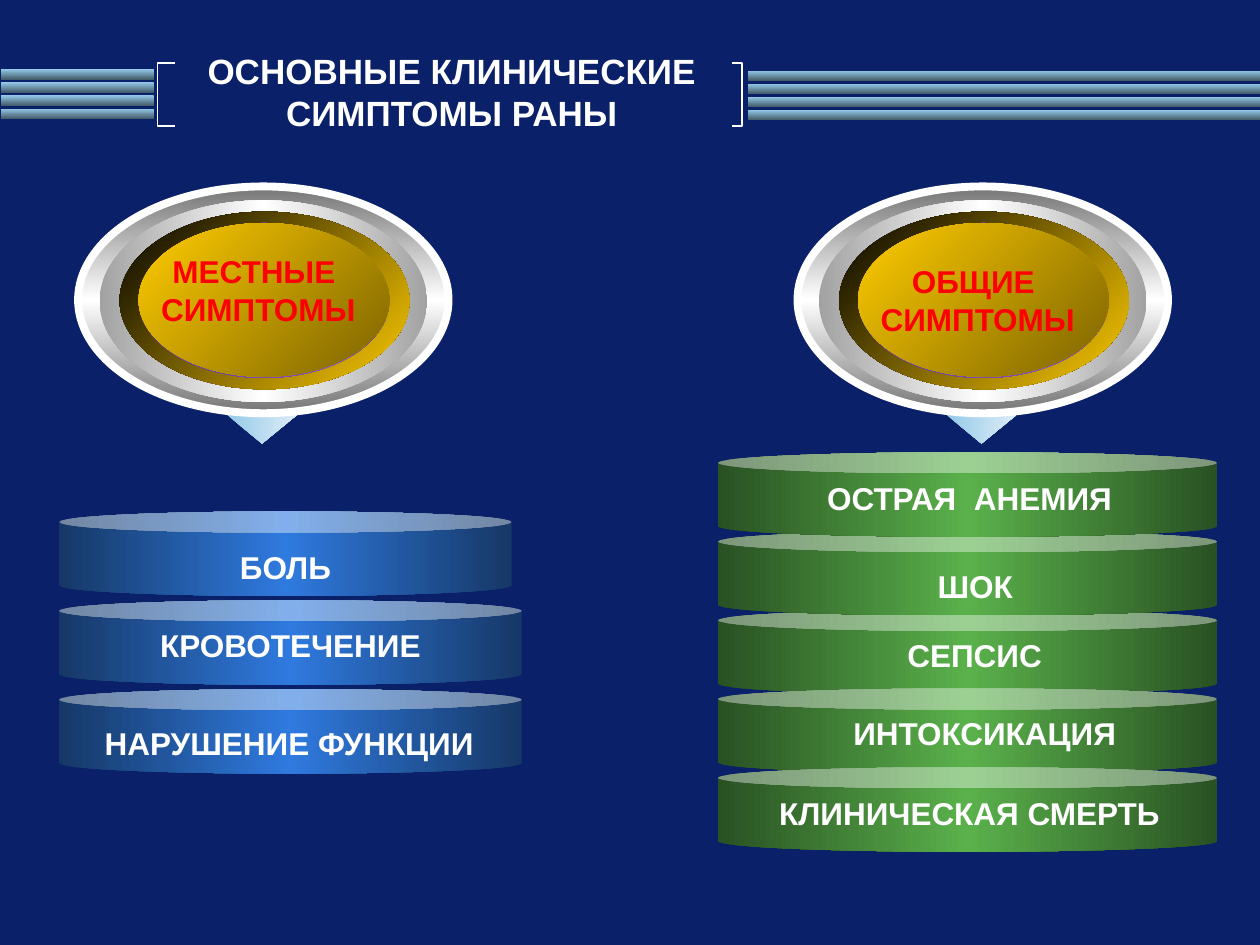
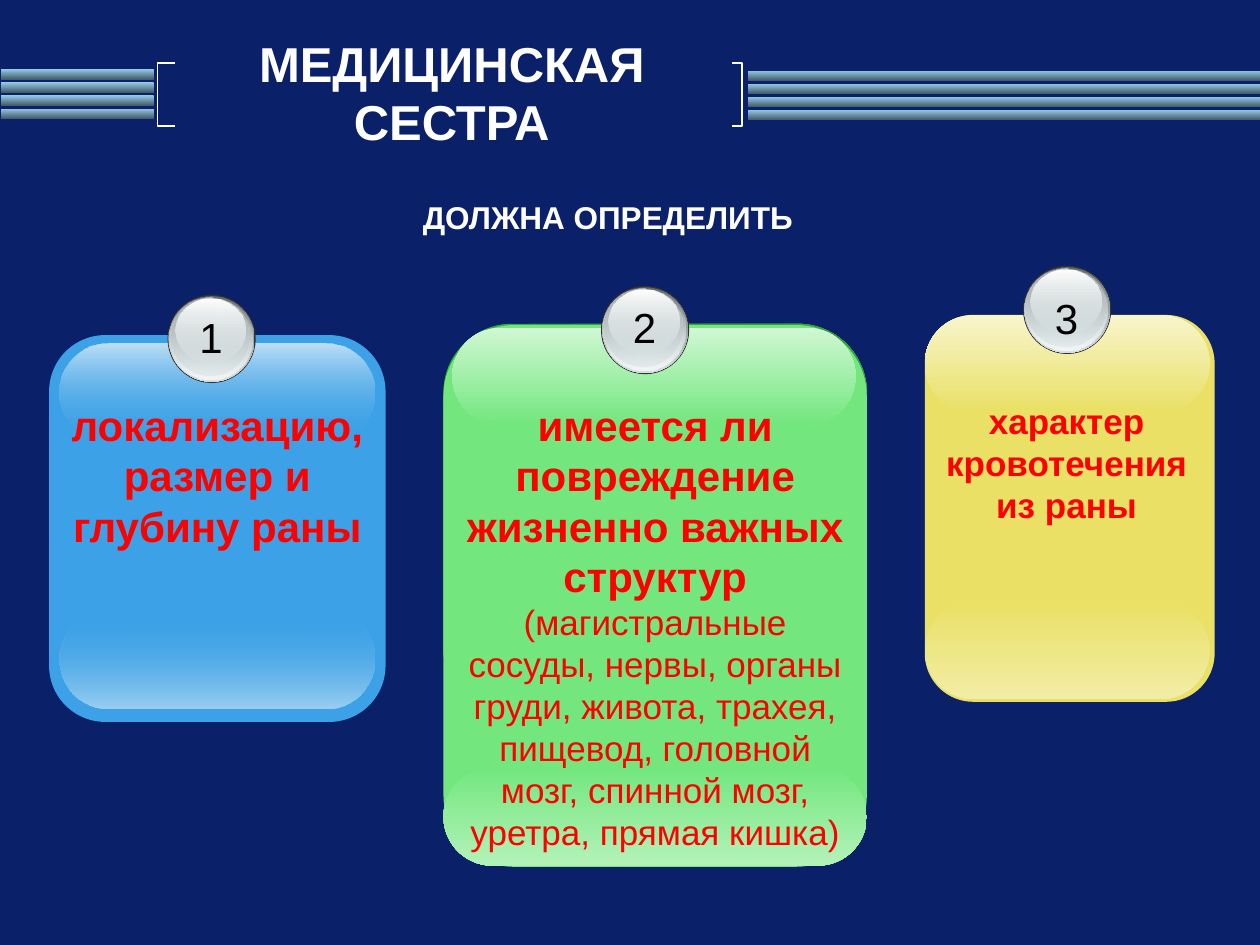
from lxml import etree
from pptx import Presentation
from pptx.dml.color import RGBColor
from pptx.enum import shapes as kinds, text as styles
from pptx.oxml.ns import qn
from pptx.util import Inches, Pt

FONT, NAVY, WHITE, RED, BLACK = "Arial", "0A2068", "FFFFFF", "FF0000", "000000"
SHAPE = kinds.MSO_SHAPE
BAR_FILL = [(0, "94CAE8"), (100, "445D6B")]
BAR_HEIGHT, BAR_STEP = 0.08, 0.104
BAR_STACKS = [(0.01, 0.55, 1.21), (5.94, 0.56, 4.06)]
BRACKETS = [(1.39, 1.25), (5.81, 5.89)]
BRACKET_TOP, BRACKET_BOTTOM = 0.5, 1
TITLE_BOX = (1.42, 0.42, 4.33, 0.62)

MEDALLION_TOP = 1.48
MEDALLION_LAYERS = [
    ((0, 0, 2.94, 1.8), [(0, "767676"), (50, WHITE), (100, "767676")], 90),
    ((0.17, 0.11, 2.6, 1.6), [(0, "A2A2A2"), (50, WHITE), (100, "A2A2A2")], 0),
    ((0.33, 0.2, 2.29, 1.41), [(0, WHITE), (50, "8A52C8"), (100, WHITE)], 45),
    ((0.33, 0.2, 2.3, 1.41), [(0, BLACK), (100, "FFCC00")], 45),
    ((0.48, 0.29, 1.99, 1.23), [(0, "6A3F99"), (50, "8A52C8"), (100, "6A3F99")], 315),
    ((0.48, 0.29, 1.99, 1.22), [(0, "FFCC00"), (100, "7C6300")], 45),
]
POINTER_FILL = [(0, "94CAE8"), (100, "DDECF6")]
BLUE_DRUM = [(0, "163867"), (50, "2F7ADF"), (100, "163867")]
GREEN_DRUM = [(0, "295123"), (50, "5AB14B"), (100, "295123")]
SYMPTOM_GROUPS = [
    {
        "heading": ["МЕСТНЫЕ ", "СИМПТОМЫ"], "heading_top": 1.95, "medallion_left": 0.62,
        "left": 0.47, "top": 4.06, "step": 0.705, "fill": BLUE_DRUM, "widths": [3.59, 3.67, 3.67],
        "order": [2, 1, 0],
        "labels": [("БОЛЬ", 0.47, 4.3, 3.59), ("КРОВОТЕЧЕНИЕ", 0.47, 4.92, 3.67),
                   ("НАРУШЕНИЕ ФУНКЦИИ", 0.47, 5.7, 3.65)],
    },
    {
        "heading": ["ОБЩИЕ ", "СИМПТОМЫ"], "heading_top": 2.03, "medallion_left": 6.33,
        "left": 5.7, "top": 3.59, "step": 0.625, "fill": GREEN_DRUM, "widths": [3.96] * 5,
        "order": [2, 1, 0, 3, 4],
        "labels": [("ОСТРАЯ  АНЕМИЯ", 5.78, 3.75, 3.83), ("ШОК", 6.02, 4.45, 3.44),
                   ("СЕПСИС", 6.33, 5, 2.81), ("ИНТОКСИКАЦИЯ", 6.41, 5.62, 2.81),
                   ("КЛИНИЧЕСКАЯ СМЕРТЬ", 5.86, 6.25, 3.67)],
    },
]

BADGE_LAYERS = [
    ((0, 0, 0.7, 0.7), "333333"),
    ((0.01, 0.01, 0.68, 0.68), [(0, "636869"), (100, "D6E1E2")]),
    ((0.01, 0.01, 0.66, 0.66), [(0, "D6E1E2", 0), (100, "F1F5F5")]),
    ((0.02, 0.02, 0.63, 0.62), [(0, "AAB2B3"), (100, "D6E1E2", 48)]),
    ((0.06, 0.03, 0.56, 0.5), [(0, WHITE), (100, "D6E1E2", 38)]),
]
CARDS = [
    {
        "number": "1", "badge": (1.33, 2.34), "number_top": 2.42,
        "bodies": [((0.39, 2.66, 2.67, 3.07), 0.167, "3CA1E6")],
        "glosses": [((0.47, 4.84, 2.5, 0.78), [(0, "3CA1E6", 0), (100, "9BCFF2")]),
                    ((0.47, 2.73, 2.5, 0.77), [(0, "BEE0F7"), (100, "3CA1E6", 0)])],
        "text_box": (0.39, 3.12, 2.67, 1.31),
        "paragraphs": [("локализацию, размер и глубину раны", 24, True)],
    },
    {
        "number": "3", "badge": (8.12, 2.11), "number_top": 2.27,
        "bodies": [((7.34, 2.5, 2.3, 3.07), 0.167, "E9E065")],
        "glosses": [((7.34, 4.77, 2.26, 0.78), [(0, "E9E065"), (100, "F2EDA6")]),
                    ((7.34, 2.5, 2.26, 0.77), [(0, "F8F5CC"), (100, "E9E065")])],
        "text_box": (7.34, 3.12, 2.25, 1.11),
        "paragraphs": [("характер кровотечения из раны", 20, True)],
    },
    {
        "number": "2", "badge": (4.77, 2.27), "number_top": 2.34,
        "bodies": [((3.52, 2.57, 3.36, 3.12), 0.175, [(0, "34B034"), (100, "3F8B4A")]),
                   ((3.52, 2.58, 3.36, 4.3), 0.167, "73E77E")],
        "glosses": [((3.52, 6.09, 3.36, 0.78), [(0, "73E77E"), (100, "B3F2B9")]),
                    ((3.59, 2.6, 3.2, 0.77), [(0, "D0F7D4"), (100, "73E77E")])],
        "text_box": (3.52, 3.12, 3.36, 3.74),
        "paragraphs": [
            ("имеется ли повреждение жизненно важных структур", 24, True),
            ("(магистральные сосуды, нервы, органы груди, живота, трахея, пищевод, "
             "головной мозг, спинной мозг, уретра, прямая кишка)", 20, False)],
    },
]


def color(value):
    """Turn a hex string into a colour."""
    return RGBColor.from_string(value)


def paint(shape, fill, angle=0):
    """Fill a shape with a hex colour or with gradient stops."""
    shape.fill.solid()
    if isinstance(fill, str):
        shape.fill.fore_color.rgb = color(fill)
        return
    solid = shape._element.spPr.find(qn("a:solidFill"))
    gradient = etree.Element(qn("a:gradFill"), rotWithShape="1")
    stops = etree.SubElement(gradient, qn("a:gsLst"))
    for position, value, *opacity in fill:
        stop = etree.SubElement(stops, qn("a:gs"), pos=str(position * 1000))
        tone = etree.SubElement(stop, qn("a:srgbClr"), val=value)
        if opacity:
            etree.SubElement(tone, qn("a:alpha"), val=str(opacity[0] * 1000))
    etree.SubElement(gradient, qn("a:lin"), ang=str(angle * 60000), scaled="0")
    solid.getparent().replace(solid, gradient)


def add_shape(slide, kind, box, fill, angle=0, adjustments=()):
    """Add a preset shape without line or shadow."""
    shape = slide.shapes.add_shape(kind, *map(Inches, box))
    shape.shadow.inherit = False
    shape.line.fill.background()
    paint(shape, fill, angle)
    for index, value in enumerate(adjustments):
        shape.adjustments[index] = value
    return shape


def write(frame, paragraphs, tone):
    """Write centred paragraphs given as (text, size, bold)."""
    for index, (content, size, bold) in enumerate(paragraphs):
        paragraph = frame.add_paragraph() if index else frame.paragraphs[0]
        paragraph.alignment = styles.PP_ALIGN.CENTER
        run = paragraph.add_run()
        run.text = content
        run.font.name, run.font.size, run.font.bold = FONT, Pt(size), bold
        run.font.color.rgb = color(tone)


def add_text(slide, box, paragraphs, tone=WHITE, wrap=True):
    """Add a text box."""
    frame = slide.shapes.add_textbox(*map(Inches, box)).text_frame
    frame.word_wrap = wrap
    write(frame, paragraphs, tone)
    return frame


def add_slide(presentation, title, size):
    """Add a slide with its bars, brackets and title."""
    slide = presentation.slides.add_slide(presentation.slide_layouts[5])
    for left, top, width in BAR_STACKS:
        for index in range(4):
            box = (left, top + index * BAR_STEP, width, BAR_HEIGHT)
            add_shape(slide, SHAPE.RECTANGLE, box, BAR_FILL, 90)
    for tip, spine in BRACKETS:
        builder = slide.shapes.build_freeform(Inches(tip), Inches(BRACKET_TOP))
        corners = [(spine, BRACKET_TOP), (spine, BRACKET_BOTTOM), (tip, BRACKET_BOTTOM)]
        builder.add_line_segments([(Inches(x), Inches(y)) for x, y in corners], close=False)
        bracket = builder.convert_to_shape()
        bracket.shadow.inherit = False
        bracket.fill.background()
        bracket.line.color.rgb = color(WHITE)
        bracket.line.width = Pt(0.75)
    holder = slide.shapes.title
    holder.left, holder.top, holder.width, holder.height = map(Inches, TITLE_BOX)
    frame = holder.text_frame
    frame.auto_size = styles.MSO_AUTO_SIZE.NONE
    frame.word_wrap = True
    frame.vertical_anchor = styles.MSO_ANCHOR.MIDDLE
    write(frame, [(title, size, True)], WHITE)
    return slide


def add_medallion(slide, left):
    """Add a pointer and the nested ovals above it."""
    pointer = add_shape(slide, SHAPE.UP_ARROW, (left + 1.18, 3.29, 0.56, 0.23),
                        POINTER_FILL, 0, (0.517, 1))
    pointer.rotation = 180
    pointer._element.spPr.xfrm.set("flipH", "1")
    for index, ((x, y, width, height), fill, angle) in enumerate(MEDALLION_LAYERS):
        oval = add_shape(slide, SHAPE.OVAL, (left + x, MEDALLION_TOP + y, width, height), fill, angle)
        if index == 0:
            oval.line.color.rgb = color(WHITE)
            oval.line.width = Pt(4.5)


def add_symptoms(slide, group):
    """Add a medallion with its heading and the labelled drums below."""
    left = group["medallion_left"]
    add_medallion(slide, left)
    for index in group["order"]:
        box = (group["left"], group["top"] + index * group["step"], group["widths"][index], 0.67)
        add_shape(slide, SHAPE.CAN, box, group["fill"], 0, (0.25,))
    heading = [(line, 18, True) for line in group["heading"]]
    add_text(slide, (left + 0.55, group["heading_top"], 1.76, 0.71), heading, RED, False)
    for label, x, y, width in group["labels"]:
        add_text(slide, (x, y, width, 0.4), [(label, 18, True)])


def add_card(slide, card):
    """Add a glossy card with its text and numbered badge."""
    for box, rounding, fill in card["bodies"]:
        add_shape(slide, SHAPE.ROUNDED_RECTANGLE, box, fill, 45, (rounding,))
    for box, fill in card["glosses"]:
        add_shape(slide, SHAPE.ROUNDED_RECTANGLE, box, fill, 90, (0.5,))
    add_text(slide, card["text_box"], card["paragraphs"], RED)
    left, top = card["badge"]
    for (x, y, width, height), fill in BADGE_LAYERS:
        add_shape(slide, SHAPE.OVAL, (left + x, top + y, width, height), fill, 90)
    add_text(slide, (left + 0.15, card["number_top"], 0.39, 0.5),
             [(card["number"], 24, False)], BLACK, False)


def main():
    """Build the presentation."""
    presentation = Presentation()
    presentation.slide_width, presentation.slide_height = Inches(10), Inches(7.5)
    background = presentation.slide_master.background.fill
    background.solid()
    background.fore_color.rgb = color(NAVY)

    slide = add_slide(presentation, "ОСНОВНЫЕ КЛИНИЧЕСКИЕ СИМПТОМЫ РАНЫ", 20)
    for group in SYMPTOM_GROUPS:
        add_symptoms(slide, group)

    slide = add_slide(presentation, "МЕДИЦИНСКАЯ СЕСТРА", 28)
    for card in CARDS:
        add_card(slide, card)
    frame = add_text(slide, (2.66, 1.41, 4.33, 0.62), [("ДОЛЖНА ОПРЕДЕЛИТЬ", 18, True)])
    frame.vertical_anchor = styles.MSO_ANCHOR.MIDDLE
    presentation.save("out.pptx")


if __name__ == "__main__":
    main()
